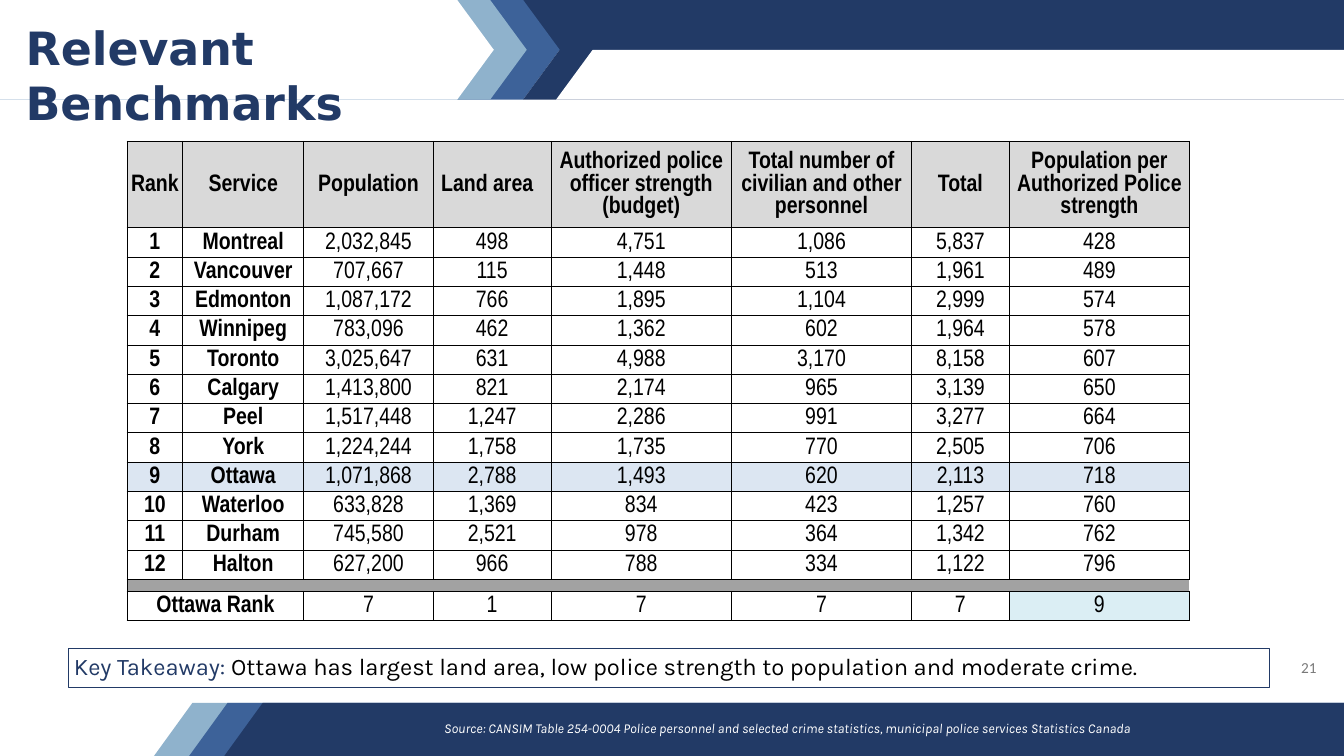
from lxml.etree import SubElement
from pptx import Presentation
from pptx.dml.color import RGBColor
from pptx.enum.text import MSO_ANCHOR, MSO_AUTO_SIZE, PP_ALIGN
from pptx.oxml.ns import qn
from pptx.util import Cm, Pt

WIDTH, HEIGHT = 55.85, 31.42
NAVY, BLUE, PALE, WHITE = "223A66", "3D6299", "8FB2CC", "FFFFFF"
HEADER_GREY, RULE_GREY, ROW_BLUE, RANK_BLUE = "D9D9D9", "A2A2A2", "DCE6F2", "DBEEF4"
COLUMNS = [2.31, 5.03, 5.38, 4.9, 7.49, 7.49, 4.06, 7.49]
HEADER = ["Rank", "Service", "Population", "Land area",
          "Authorized police officer strength (budget)",
          "Total number of civilian and other personnel", "Total",
          "Population per Authorized Police strength"]
SERVICES = [
    ["Montreal", "2,032,845", "498", "4,751", "1,086", "5,837", "428"],
    ["Vancouver", "707,667", "115", "1,448", "513", "1,961", "489"],
    ["Edmonton", "1,087,172", "766", "1,895", "1,104", "2,999", "574"],
    ["Winnipeg", "783,096", "462", "1,362", "602", "1,964", "578"],
    ["Toronto", "3,025,647", "631", "4,988", "3,170", "8,158", "607"],
    ["Calgary", "1,413,800", "821", "2,174", "965", "3,139", "650"],
    ["Peel", "1,517,448", "1,247", "2,286", "991", "3,277", "664"],
    ["York", "1,224,244", "1,758", "1,735", "770", "2,505", "706"],
    ["Ottawa", "1,071,868", "2,788", "1,493", "620", "2,113", "718"],
    ["Waterloo", "633,828", "1,369", "834", "423", "1,257", "760"],
    ["Durham", "745,580", "2,521", "978", "364", "1,342", "762"],
    ["Halton", "627,200", "966", "788", "334", "1,122", "796"],
]
OTTAWA_RANK = ["Ottawa Rank", "", "7", "1", "7", "7", "7", "9"]


def rgb(value):
    """Return the colour for a hex string."""
    return RGBColor.from_string(value)


def add_run(p, text, font="Karla", size=28, color="000000", bold=False, italic=False):
    """Append a formatted run to a paragraph."""
    r = p.add_run()
    r.text = text
    r.font.name, r.font.size = font, Pt(size)
    r.font.bold, r.font.italic = bold, italic
    r.font.color.rgb = rgb(color)


def add_polygon(slide, points, color):
    """Draw a filled outline through points in centimetres."""
    points = [(Cm(x), Cm(y)) for x, y in points]
    builder = slide.shapes.build_freeform(*points[0], scale=1.0)
    builder.add_line_segments(points[1:])
    sp = builder.convert_to_shape()
    sp.shadow.inherit = False
    sp.fill.solid()
    sp.fill.fore_color.rgb = rgb(color)
    sp.line.fill.background()


def add_top_bands(slide):
    """Layer the slanted bands that form the chevrons at the top."""
    step, tip, mid, low = 1.37, 1.52, 2.07, 4.14
    notch = 19 + 2 * step
    add_polygon(slide, [(13.26, 0), (WIDTH, 0), (WIDTH, mid), (14.76, mid)], NAVY)
    for i, color in enumerate([BLUE, PALE, WHITE]):
        x = notch - i * step
        add_polygon(slide, [(0, 0), (x, 0), (x + tip, mid), (0, mid)], color)
        add_polygon(slide, [(0, mid), (x + tip, mid), (x, low), (0, low)], color)
    for i, color in enumerate([NAVY, WHITE]):
        x = notch + i * step
        add_polygon(slide, [(x + tip, mid), (WIDTH, mid), (WIDTH, low), (x, low)], color)


def add_bottom_bands(slide):
    """Layer the slanted bands at the bottom."""
    for i, color in enumerate([PALE, BLUE, NAVY]):
        x = 8 + i * 1.46
        add_polygon(slide, [(x, 29.21), (WIDTH, 29.21), (WIDTH, HEIGHT), (x - 1.6, HEIGHT)], color)


def add_title(slide, text):
    """Place and format the title placeholder in front of the bands."""
    sp = slide.shapes.title
    slide.shapes._spTree.append(sp._element)
    sp.left, sp.top, sp.width, sp.height = Cm(0.81), Cm(0.69), Cm(21.87), Cm(2.79)
    tf = sp.text_frame
    tf.word_wrap, tf.auto_size = True, MSO_AUTO_SIZE.NONE
    tf.vertical_anchor = MSO_ANCHOR.TOP
    tf.margin_left, tf.margin_top = Cm(0.25), Cm(0.13)
    p = tf.paragraphs[0]
    p.alignment = PP_ALIGN.LEFT
    add_run(p, text, font="DejaVu Sans", size=54, color=NAVY, bold=True)


def add_text(slide, box, align=PP_ALIGN.LEFT, anchor=MSO_ANCHOR.MIDDLE):
    """Add a text box and return it with its first paragraph."""
    sp = slide.shapes.add_textbox(*[Cm(v) for v in box])
    tf = sp.text_frame
    tf.word_wrap = True
    tf.vertical_anchor = anchor
    p = tf.paragraphs[0]
    p.alignment = align
    return sp, p


def set_borders(cell, sides):
    """Draw thin black lines on the sides named by their letters."""
    tcPr = cell._tc.get_or_add_tcPr()
    for side in "LRTB":
        drawn = side in sides
        ln = SubElement(tcPr, qn(f"a:ln{side}"), w=str(Pt(1) if drawn else 0))
        fill = SubElement(ln, qn("a:solidFill" if drawn else "a:noFill"))
        if drawn:
            SubElement(fill, qn("a:srgbClr"), val="000000")


def format_cell(cell, text, fill=None, bold=False, sides="LRTB"):
    """Write one table cell with its borders and fill."""
    set_borders(cell, sides)
    if fill:
        cell.fill.solid()
        cell.fill.fore_color.rgb = rgb(fill)
    else:
        cell.fill.background()
    cell.margin_left = cell.margin_right = cell.margin_top = Cm(0.03)
    cell.margin_bottom = 0
    cell.vertical_anchor = MSO_ANCHOR.MIDDLE
    p = cell.text_frame.paragraphs[0]
    p.alignment = PP_ALIGN.CENTER
    if text:
        add_run(p, text, font="Arial Narrow", bold=bold)
    else:
        SubElement(p._p, qn("a:endParaRPr"), sz="200")


def add_benchmarks(slide):
    """Add the table of police services and the rank of Ottawa."""
    ranked = [[str(i), *service] for i, service in enumerate(SERVICES, 1)]
    rows = [HEADER, *ranked, [""] * len(COLUMNS), OTTAWA_RANK]
    heights = [3.6] + [1.2] * len(ranked) + [0.5, 1.2]
    rule_row, last_row = len(rows) - 2, len(rows) - 1
    frame = slide.shapes.add_table(len(rows), len(COLUMNS), Cm(5.28), Cm(5.87),
                                   Cm(sum(COLUMNS)), Cm(sum(heights)))
    table = frame.table
    table.first_row = table.horz_banding = False
    for column, width in zip(table.columns, COLUMNS):
        column.width = Cm(width)
    for row, height in zip(table.rows, heights):
        row.height = Cm(height)
    fills = {0: HEADER_GREY, rule_row: RULE_GREY}
    for i, row in enumerate(rows):
        for j, text in enumerate(row):
            fill = ROW_BLUE if row[1] == "Ottawa" else fills.get(i)
            if (i, j) == (last_row, len(COLUMNS) - 1):
                fill = RANK_BLUE
            sides = "LRTB"
            if i == rule_row:
                sides = "LTB" if j == 0 else "TB"
            format_cell(table.cell(i, j), text, fill, bold=i == 0 or j < 2, sides=sides)
    table.cell(0, HEADER.index("Land area")).margin_right = Cm(0.44)
    table.cell(last_row, 0).merge(table.cell(last_row, 1))


def main():
    """Build the slide and save it."""
    prs = Presentation()
    prs.slide_width, prs.slide_height = Cm(WIDTH), Cm(HEIGHT)
    slide = prs.slides.add_slide(prs.slide_layouts[5])
    add_bottom_bands(slide)
    add_top_bands(slide)
    add_title(slide, "Relevant Benchmarks")
    sp, p = add_text(slide, (2.82, 26.95, 49.94, 1.63), anchor=MSO_ANCHOR.TOP)
    sp.line.color.rgb = rgb(NAVY)
    sp.line.width = Pt(0.75)
    add_run(p, "Key Takeaway: ", color=NAVY)
    add_run(p, "Ottawa has largest land area, low police strength to population and moderate crime.")
    sp, p = add_text(slide, (18.21, 29.79, 33.22, 0.94))
    add_run(p, "Source: CANSIM Table 254-0004 Police personnel and selected crime statistics, "
               "municipal police services Statistics Canada", size=16, color=WHITE, italic=True)
    sp, p = add_text(slide, (42.39, 26.9, 12.57, 1.68), align=PP_ALIGN.RIGHT)
    add_run(p, "21", font="Calibri", size=18, color="797979")
    add_benchmarks(slide)
    prs.save("out.pptx")


if __name__ == "__main__":
    main()
